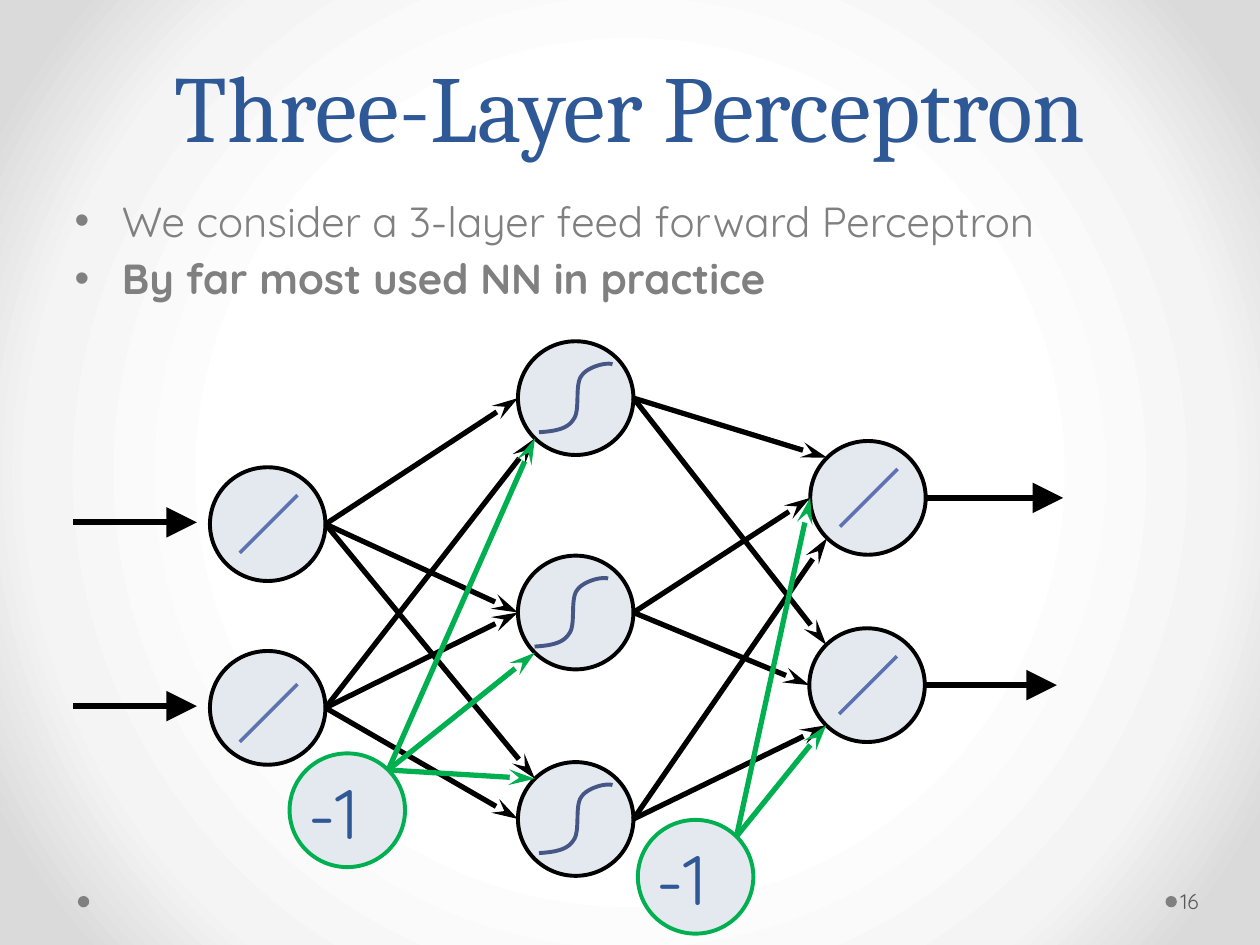
from dataclasses import dataclass
from math import cos, radians, sin

from pptx import Presentation
from pptx.dml.color import RGBColor
from pptx.enum.shapes import MSO_CONNECTOR, MSO_SHAPE
from pptx.enum.text import MSO_ANCHOR, PP_ALIGN
from pptx.oxml import parse_xml
from pptx.oxml.ns import nsdecls, qn
from pptx.util import Pt

OVAL, STRAIGHT = MSO_SHAPE.OVAL, MSO_CONNECTOR.STRAIGHT
TOP, MIDDLE, BOTTOM = MSO_ANCHOR.TOP, MSO_ANCHOR.MIDDLE, MSO_ANCHOR.BOTTOM
LEFT, CENTER = PP_ALIGN.LEFT, PP_ALIGN.CENTER


@dataclass(frozen=True)
class Theme:
    heading: str = "Cambria"
    body: str = "Quicksand"
    blue: str = "2F5897"
    gray: str = "808080"
    dark_gray: str = "595959"
    black: str = "000000"
    green: str = "00B050"
    node: str = "E4E9EF"
    ramp: str = "5C72B2"
    sigmoid: str = "475785"
    title_size: int = 54
    bias_size: int = 40
    body_size: int = 24
    number_size: int = 12


T = Theme()
BACKGROUND = ((0, "FFFFFF"), (50, "FFFFFF"), (76, "F4F4F4"), (92, "DADADA"))
NODE_W, NODE_H = 66, 65

# Node corners relative to the diagram box
INPUTS = ((78, 72), (78, 177))
HIDDEN = ((254, 0), (254, 122.5), (254, 240.5))
OUTPUTS = ((421, 57), (420.5, 164))
BIASES = ((123.5, 235.5), (322.5, 273.5))

# Bezier segments of the sigmoid relative to its top left corner
SIGMOID = (
    ((0, 39.5), (8, 39), (16, 38), (19.5, 32.5)),
    ((19.5, 32.5), (24, 27.5), (20, 12), (24.5, 7)),
    ((24.5, 7), (28, 2), (39, -0.7), (42, 0.7)),
)


def color(hex_code):
    return RGBColor.from_string(hex_code)


def paint_background(slide):
    slide.background.fill.solid()
    bg = slide.element.find(".//" + qn("p:bgPr"))
    stops = "".join(
        f'<a:gs pos="{pos * 1000}"><a:srgbClr val="{c}"/></a:gs>' for pos, c in BACKGROUND)
    gradient = parse_xml(
        f'<a:gradFill {nsdecls("a")} rotWithShape="1"><a:gsLst>{stops}</a:gsLst>'
        '<a:path path="circle"><a:fillToRect l="50000" t="50000" r="50000" b="50000"/>'
        '</a:path></a:gradFill>')
    bg.replace(bg.find(qn("a:solidFill")), gradient)


def add_text_box(slide, box, anchor=TOP, left_inset=7.2):
    tf = slide.shapes.add_textbox(*map(Pt, box)).text_frame
    tf.word_wrap = True
    tf.vertical_anchor = anchor
    tf.margin_left = Pt(left_inset)
    return tf


def write(p, text, font, size, hex_code, align=LEFT, bold=False):
    p.alignment = align
    r = p.add_run()
    r.text = text
    r.font.name, r.font.size, r.font.bold = font, Pt(size), bold
    r.font.color.rgb = color(hex_code)


def add_oval(slide, box, fill, line=None):
    sp = slide.shapes.add_shape(OVAL, *map(Pt, box))
    sp.shadow.inherit = False
    sp.fill.solid()
    sp.fill.fore_color.rgb = color(fill)
    if line:
        sp.line.color.rgb = color(line)
        sp.line.width = Pt(2.25)
    else:
        sp.line.fill.background()


def add_line(slide, start, end, hex_code, width, head=None, head_width="med"):
    cx = slide.shapes.add_connector(STRAIGHT, *map(Pt, (*start, *end)))
    cx.line.color.rgb = color(hex_code)
    cx.line.width = Pt(width)
    if head:
        cx.line._get_or_add_ln().append(parse_xml(
            f'<a:tailEnd {nsdecls("a")} type="{head}" w="{head_width}" len="lg"/>'))
    cx.element.spPr.append(parse_xml(f'<a:effectLst {nsdecls("a")}/>'))


def add_edge(slide, start, end, hex_code=T.black):
    add_line(slide, start, end, hex_code, 3, "stealth")


def add_signal(slide, start, end):
    add_line(slide, start, end, T.black, 3.5, "triangle", "lg")


def port(node, angle):
    """Point on a node's rim, clockwise in degrees from its right side."""
    a = radians(angle)
    return (node[0] + NODE_W / 2 * (1 + cos(a)), node[1] + NODE_H / 2 * (1 + sin(a)))


def add_ramp(slide, node, dy=0):
    x, y = node[0] + 17, node[1] + 16 + dy
    add_line(slide, (x, y + 33), (x + 33, y), T.ramp, 2)


def add_sigmoid(slide, x, y, steps=12):
    points = []
    for a, b, c, d in SIGMOID:
        for i in range(steps + 1):
            t = i / steps
            u = 1 - t
            points.append(tuple(
                Pt(o + u**3 * a[k] + 3 * u * u * t * b[k] + 3 * u * t * t * c[k] + t**3 * d[k])
                for k, o in enumerate((x, y))))
    builder = slide.shapes.build_freeform(*points[0])
    builder.add_line_segments(points[1:], close=False)
    sp = builder.convert_to_shape()
    sp.shadow.inherit = False
    sp.fill.background()
    sp.line.color.rgb = color(T.sigmoid)
    sp.line.width = Pt(2.25)


def add_title(slide, box):
    p = add_text_box(slide, box, BOTTOM).paragraphs[0]
    p.line_spacing = Pt(58)
    write(p, "Three-Layer Perceptron", T.heading, T.title_size, T.blue, CENTER)


def add_bullets(slide, box):
    tf = add_text_box(slide, box)
    lines = (("We consider a 3-layer feed forward Perceptron", False),
             ("By far most used NN in practice", True))
    for i, (text, bold) in enumerate(lines):
        p = tf.add_paragraph() if i else tf.paragraphs[0]
        p.space_before = Pt(4)
        write(p, text, T.body, T.body_size, T.gray, bold=bold)
        pPr = p._p.get_or_add_pPr()
        pPr.set("marL", str(Pt(27)))
        pPr.set("indent", str(Pt(-27)))
        pPr.append(parse_xml(f'<a:buFont {nsdecls("a")} typeface="Arial"/>'))
        pPr.append(parse_xml(f'<a:buChar {nsdecls("a")} char="•"/>'))


def add_footer(slide, box):
    x, y, w, h = box
    for dot_x in (x, x + 621.5):
        add_oval(slide, (dot_x, y + 11.5, 6.5, 6.5), T.gray)
    tf = add_text_box(slide, (x + w - 44, y, 44, h), MIDDLE, 2)
    write(tf.paragraphs[0], "16", T.body, T.number_size, T.dark_gray)


def add_network(slide, box):
    left, top = box[:2]
    inputs, hidden, outputs, biases = (
        [(left + x, top + y) for x, y in layer] for layer in (INPUTS, HIDDEN, OUTPUTS, BIASES))

    for node in (*inputs, *hidden, *outputs):
        add_oval(slide, (*node, NODE_W, NODE_H), T.node, T.black)

    # Angles of the ports where edges arrive, by source and then target
    arrivals = ((inputs, hidden, ((180, 180, 225), (135, 180, 180))),
                (hidden, outputs, ((225, 225), (180, 180), (135, 135))))
    for sources, targets, angles in arrivals:
        for source, row in zip(sources, angles):
            for target, angle in zip(targets, row):
                add_edge(slide, port(source, 0), port(target, angle))

    for node in inputs:
        y = node[1] + NODE_H / 2 - 1
        add_signal(slide, (left, y), (left + 70.5, y))
    for node, length in zip(outputs, (78.5, 75.5)):
        x, y = port(node, 0)
        add_signal(slide, (x, y), (x + length, y))

    for node in biases:
        add_oval(slide, (*node, NODE_W, NODE_H), T.node, T.green)
    for bias, targets, angles in zip(biases, (hidden, outputs), ((135, 135, 225), (180, 135))):
        for target, angle in zip(targets, angles):
            add_edge(slide, port(bias, -45), port(target, angle), T.green)
    for x, y in biases:
        tf = add_text_box(slide, (x + 3.5, y + 5.5, 59, 55.5))
        write(tf.paragraphs[0], "-1", T.body, T.bias_size, T.blue)

    for (x, y), dx in zip(hidden, (12, 9.5, 12)):
        add_sigmoid(slide, x + dx, y + 12.5)
    for node, dy in zip((*inputs, *outputs), (0, 3, 0, 0)):
        add_ramp(slide, node, dy)


def main():
    prs = Presentation()
    prs.slide_width, prs.slide_height = Pt(720), Pt(540)
    slide = prs.slides.add_slide(prs.slide_layouts[6])
    paint_background(slide)
    add_footer(slide, (44.5, 500.5, 672, 29))
    add_title(slide, (36, 0, 648, 96))
    add_bullets(slide, (35.5, 108, 658, 81.5))
    add_network(slide, (42, 195, 565, 339))
    prs.save("out.pptx")


if __name__ == "__main__":
    main()
